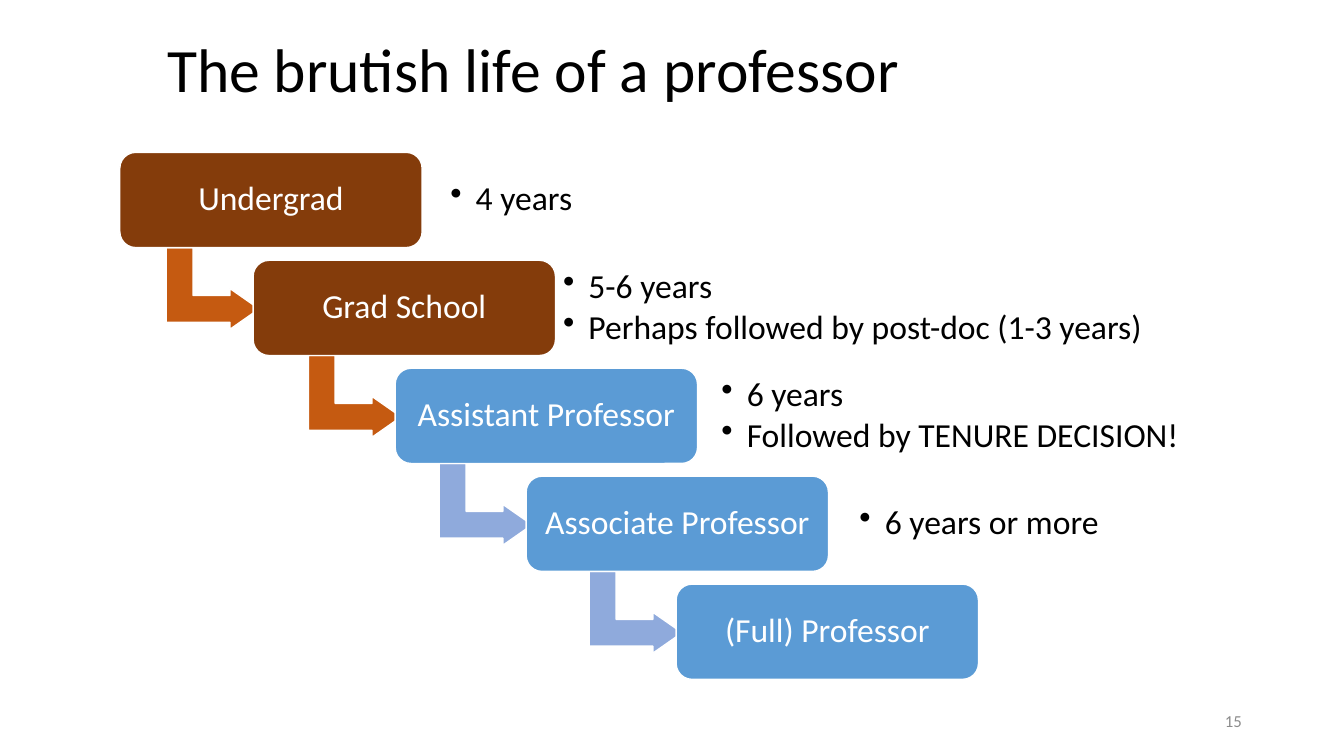
"""Build a slide showing the career stages of a professor as a descending staircase."""
from dataclasses import dataclass

from lxml.etree import SubElement
from pptx import Presentation
from pptx.dml.color import RGBColor
from pptx.enum.shapes import MSO_SHAPE as Shape
from pptx.enum.text import MSO_ANCHOR as Anchor, PP_ALIGN as Align
from pptx.oxml.ns import qn
from pptx.util import Cm, Pt

TITLE = "The brutish life of a professor"
PAGE_NUMBER = "15"
STAGES = [
    {"name": "Undergrad", "phase": "student", "left": 3.02,
     "notes": ["4 years"], "notes_left": 11.1, "notes_width": 7.47},
    {"name": "Grad School", "phase": "student", "left": 6.38,
     "notes": ["5-6 years", "Perhaps followed by post-doc (1-3 years)"],
     "notes_left": 13.94, "notes_width": 17.58},
    {"name": "Assistant Professor", "phase": "faculty", "left": 9.96,
     "notes": ["6 years", "Followed by TENURE DECISION!"],
     "notes_left": 17.93, "notes_width": 12.62},
    {"name": "Associate Professor", "phase": "faculty", "left": 13.26,
     "notes": ["6 years or more"], "notes_left": 21.41, "notes_width": 7.11},
    {"name": "(Full) Professor", "phase": "faculty", "left": 17.04, "notes": []},
]


@dataclass(frozen=True)
class Theme:
    """Colours and type sizes of the slide."""
    font: str = "Calibri"
    black: str = "000000"
    white: str = "FFFFFF"
    grey: str = "8C8C8C"
    student: tuple = ("843C0B", "C55A11")
    faculty: tuple = ("5B9BD5", "8FAADC")
    title_size: int = 44
    body_size: int = 24
    number_size: int = 12


THEME = Theme()
FIRST_TOP, STEP = 3.84, 2.72
BOX_WIDTH, BOX_HEIGHT = 7.62, 2.4
ARROW_WIDTH, ARROW_HEIGHT = 2.06, 2.34
ARROW_DROP, ARROW_LEAD = 3.43, 1.02
ARROW_ADJUSTMENTS = (0.328, 0.25, 0.358)
NOTES_DROP, NOTES_HEIGHT = 0.22, 1.96
BULLET_INDENT, BULLET_GAP = 0.64, 3.6


def write(shape, lines, size, color, align=Align.LEFT, spacing=0.9):
    """Fill a shape with formatted, vertically centred lines."""
    frame = shape.text_frame
    frame.text = "\n".join(lines)
    frame.word_wrap = True
    frame.vertical_anchor = Anchor.MIDDLE
    for para in frame.paragraphs:
        para.alignment = align
        para.line_spacing = spacing
        for span in para.runs:
            span.font.name = THEME.font
            span.font.size = Pt(size)
            span.font.color.rgb = RGBColor.from_string(color)


def add_text(page, place, *style):
    """Add a text box at the given place in centimetres."""
    box = page.shapes.add_textbox(*map(Cm, place))
    write(box, *style)
    return box


def add_block(page, kind, place, color):
    """Add a filled shape with a thin white outline."""
    block = page.shapes.add_shape(kind, *map(Cm, place))
    block.shadow.inherit = False
    block.fill.solid()
    block.fill.fore_color.rgb = RGBColor.from_string(color)
    block.line.color.rgb = RGBColor.from_string(THEME.white)
    block.line.width = Pt(1)
    return block


def add_bullets(box):
    """Give every paragraph a hanging bullet."""
    for para in box.text_frame.paragraphs:
        para.space_after = Pt(BULLET_GAP)
        properties = para._p.get_or_add_pPr()
        properties.set("marL", str(Cm(BULLET_INDENT)))
        properties.set("indent", str(-Cm(BULLET_INDENT)))
        SubElement(properties, qn("a:buChar")).set("char", "•")


def add_arrow(page, top, next_left, color):
    """Add the bent arrow leading from one stage to the next."""
    place = (next_left - ARROW_LEAD - ARROW_WIDTH / 2,
             top + ARROW_DROP - ARROW_HEIGHT / 2, ARROW_WIDTH, ARROW_HEIGHT)
    arrow = add_block(page, Shape.BENT_UP_ARROW, place, color)
    arrow.rotation = 90
    for index, value in enumerate(ARROW_ADJUSTMENTS):
        arrow.adjustments[index] = value


def add_stage(page, index, stage):
    """Add one stage with its arrow, box and notes."""
    top = FIRST_TOP + index * STEP
    box_color, arrow_color = getattr(THEME, stage["phase"])
    if index + 1 < len(STAGES):
        add_arrow(page, top, STAGES[index + 1]["left"], arrow_color)
    box = add_block(page, Shape.ROUNDED_RECTANGLE,
                    (stage["left"], top, BOX_WIDTH, BOX_HEIGHT), box_color)
    write(box, [stage["name"]], THEME.body_size, THEME.white, Align.CENTER)
    if stage["notes"]:
        place = (stage["notes_left"], top + NOTES_DROP, stage["notes_width"], NOTES_HEIGHT)
        add_bullets(add_text(page, place, stage["notes"], THEME.body_size, THEME.black))


def main():
    """Assemble and save the deck."""
    deck = Presentation()
    deck.slide_width, deck.slide_height = Cm(33.87), Cm(19.05)
    page = deck.slides.add_slide(deck.slide_layouts[6])
    add_text(page, (3.96, 0, 29.21, 3.68), [TITLE], THEME.title_size, THEME.black)
    for index, stage in enumerate(STAGES):
        add_stage(page, index, stage)
    add_text(page, (23.93, 17.65, 7.62, 1.02), [PAGE_NUMBER],
             THEME.number_size, THEME.grey, Align.RIGHT, 1.0)
    deck.save("out.pptx")


if __name__ == "__main__":
    main()
